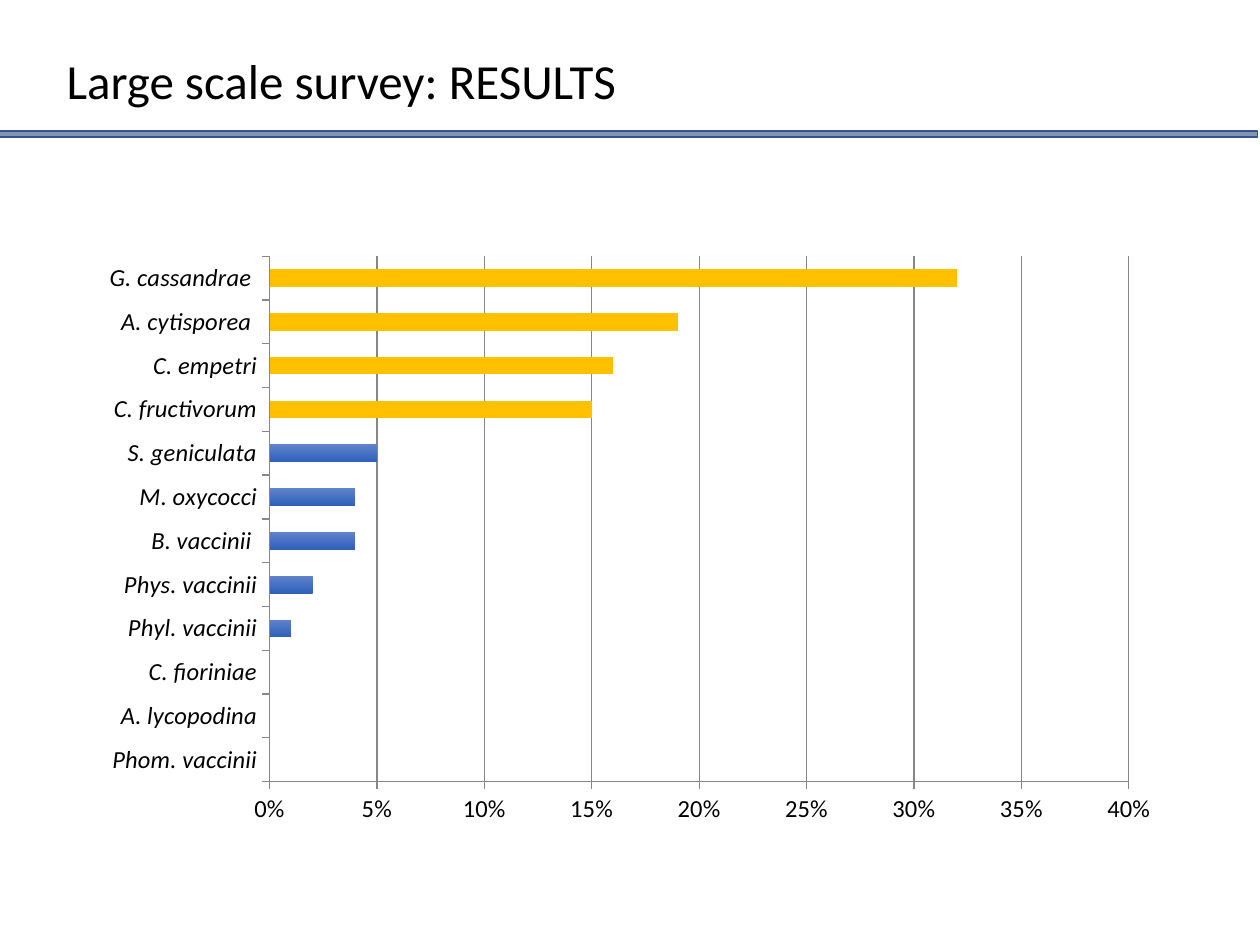
import lxml.etree
import pptx
import pptx.chart.data
import pptx.dml.color
import pptx.enum.chart
import pptx.enum.shapes
import pptx.enum.text
import pptx.util

COLS, ROWS = 100, 75  # grid of the slide
CELL = pptx.util.Inches(0.1)
FONT = "Calibri"
HUES = {
    "text": "000000", "band": "8497B0", "edge": "325491", "grid": "878787",
    "gold": "FFC000", "light": "6083CB", "dark": "2E61BA",
}
# Species from the bottom bar up, with their share of the survey
RATES = {
    "Phom. vaccinii": 0, "A. lycopodina": 0, "C. fioriniae": 0,
    "Phyl. vaccinii": 0.01, "Phys. vaccinii": 0.02, "B. vaccinii ": 0.04,
    "M. oxycocci": 0.04, "S. geniculata": 0.05, "C. fructivorum": 0.15,
    "C. empetri": 0.16, "A. cytisporea ": 0.19, "G. cassandrae ": 0.32,
}
MAJOR = 0.1  # species above this share are gold


def hue(name):
    return pptx.dml.color.RGBColor.from_string(HUES[name])


def place(*cells):
    """Turn left, top, width and height in grid cells into lengths."""
    return [round(count * CELL) for count in cells]


def style(font, size):
    font.name = FONT
    font.size = pptx.util.Pt(size)
    font.color.rgb = hue("text")


def paint(fill, name):
    fill.solid()
    fill.fore_color.rgb = hue(name)


def rule(line, name, width):
    line.color.rgb = hue(name)
    line.width = pptx.util.Pt(width)


def add_title(slide, box, text):
    frame = slide.shapes.add_textbox(*box).text_frame
    frame.word_wrap = True
    frame.vertical_anchor = pptx.enum.text.MSO_ANCHOR.BOTTOM
    run = frame.paragraphs[0].add_run()
    run.text = text
    style(run.font, 28)


def add_band(slide, box):
    band = slide.shapes.add_shape(pptx.enum.shapes.MSO_SHAPE.RECTANGLE, *box)
    band.shadow.inherit = False
    paint(band.fill, "band")
    rule(band.line, "edge", 1)


def fix_plot(chart, **sides):
    """Pin the inner plot area to shares of the chart box."""
    area = chart._chartSpace.chart.plotArea
    space = area.nsmap["c"]
    for old in area.findall(f"{{{space}}}layout"):
        area.remove(old)
    layout = lxml.etree.Element(f"{{{space}}}layout")
    manual = lxml.etree.SubElement(layout, f"{{{space}}}manualLayout")
    marks = {"layoutTarget": "inner", "xMode": "edge", "yMode": "edge", **sides}
    for tag, val in marks.items():
        lxml.etree.SubElement(manual, f"{{{space}}}{tag}").set("val", str(val))
    area.insert(0, layout)


def add_bars(slide, box):
    data = pptx.chart.data.CategoryChartData(number_format="0%")
    data.categories = list(RATES)
    data.add_series("Series 1", list(RATES.values()))
    kind = pptx.enum.chart.XL_CHART_TYPE.BAR_STACKED
    chart = slide.shapes.add_chart(kind, *box, data).chart
    chart.has_legend = False
    chart.has_title = False
    style(chart.font, 14)
    fix_plot(chart, x=14.4 / 86, y=0.02, w=68.2 / 86, h=41.7 / 46.9)

    # Axes
    for axis in (chart.category_axis, chart.value_axis):
        axis.major_tick_mark = pptx.enum.chart.XL_TICK_MARK.OUTSIDE
        rule(axis.format.line, "grid", 0)
        style(axis.tick_labels.font, 14)
    chart.category_axis.tick_labels.font.italic = True
    scale = chart.value_axis
    scale.minimum_scale, scale.maximum_scale, scale.major_unit = 0, 0.4, 0.05
    scale.tick_labels.number_format = "0%"
    scale.tick_labels.number_format_is_linked = False
    scale.has_major_gridlines = True
    rule(scale.major_gridlines.format.line, "grid", 0)

    # Bars: a blue blend, with gold for the major species
    plot = chart.plots[0]
    plot.gap_width, plot.overlap = 150, 100
    plot.vary_by_categories = False
    bars = plot.series[0]
    bars.invert_if_negative = False
    blend = bars.format.fill
    blend.gradient()
    blend.gradient_angle = 270
    for stop, name in zip(blend.gradient_stops, ("light", "dark")):
        stop.color.rgb = hue(name)
    for spot, rate in enumerate(RATES.values()):
        if rate > MAJOR:
            paint(bars.points[spot].format.fill, "gold")


def main():
    deck = pptx.Presentation()
    deck.slide_width = COLS * CELL
    deck.slide_height = ROWS * CELL
    slide = deck.slides.add_slide(deck.slide_layouts[6])
    add_bars(slide, place(7, 19.4, 86, 46.9))
    add_title(slide, place(4.3, 4.1, 49.6, 5.1), "Large scale survey: RESULTS")
    add_band(slide, place(-0.2, 10.4, COLS, 0.5))
    deck.save("out.pptx")


if __name__ == "__main__":
    main()
